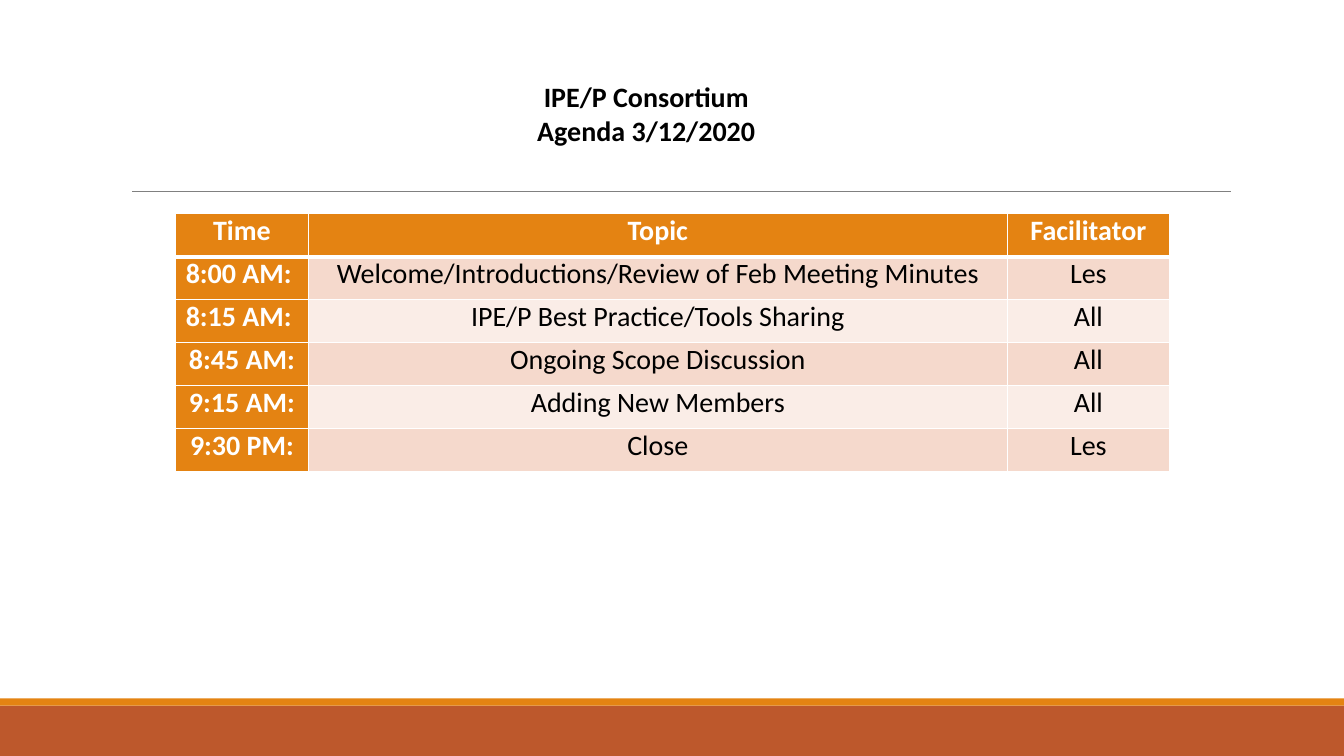
import pptx
import pptx.dml.color
import pptx.enum.shapes
import pptx.enum.text
import pptx.oxml
import pptx.oxml.ns
import pptx.util

Inches, Pt = pptx.util.Inches, pptx.util.Pt
CENTER = pptx.enum.text.PP_ALIGN.CENTER
ORANGE, RUST, WHITE, BLACK = "E48312", "BD582C", "FFFFFF", "000000"
BANDS = ["F5D9CC", "FAEDE7"]

AGENDA = [
    ("Time", "Topic", "Facilitator"),
    ("8:00 AM: ", "Welcome/Introductions/Review of Feb Meeting Minutes", "Les"),
    ("8:15 AM: ", "IPE/P Best Practice/Tools Sharing", "All"),
    ("8:45 AM:", "Ongoing Scope Discussion", "All"),
    ("9:15 AM:", "Adding New Members", "All"),
    ("9:30 PM:", "Close", "Les"),
]
COLUMN_WIDTHS = [1.32, 6.93, 1.61]
TABLE_HEIGHT = 2.56


def rgb(hex_color):
    return pptx.dml.color.RGBColor.from_string(hex_color)


def add_centered_run(paragraph, text, color, bold):
    paragraph.alignment = CENTER
    run = paragraph.add_run()
    run.text = text
    run.font.name = "Calibri"
    run.font.size = Pt(20)
    run.font.bold = bold
    run.font.color.rgb = rgb(color)


presentation = pptx.Presentation()
presentation.slide_width = Inches(13.33)
presentation.slide_height = Inches(7.5)
slide = presentation.slides.add_slide(presentation.slide_layouts[5])

# Footer bands
for top, height, color in [(7, 0.5, RUST), (6.93, 0.07, ORANGE)]:
    band = slide.shapes.add_shape(
        pptx.enum.shapes.MSO_SHAPE.RECTANGLE,
        0, Inches(top), presentation.slide_width, Inches(height))
    band.shadow.inherit = False
    band.fill.solid()
    band.fill.fore_color.rgb = rgb(color)
    band.line.fill.background()

# Rule under the title
rule = slide.shapes.add_connector(
    pptx.enum.shapes.MSO_CONNECTOR.STRAIGHT,
    Inches(1.31), Inches(1.9), Inches(12.21), Inches(1.9))
rule.line.color.rgb = rgb("808080")
rule.line.width = Pt(0.5)
rule._element.spPr.append(pptx.oxml.parse_xml(
    f"<a:effectLst {pptx.oxml.ns.nsdecls('a')}/>"))

# Title
title = slide.shapes.title
title.left, title.top = Inches(5.22), Inches(0.74)
title.width, title.height = Inches(2.38), Inches(0.77)
title_frame = title.text_frame
title_frame.word_wrap = False
title_frame.auto_size = pptx.enum.text.MSO_AUTO_SIZE.SHAPE_TO_FIT_TEXT
title_frame.vertical_anchor = pptx.enum.text.MSO_ANCHOR.MIDDLE
add_centered_run(title_frame.paragraphs[0], "IPE/P Consortium", BLACK, True)
add_centered_run(title_frame.add_paragraph(), "Agenda 3/12/2020", BLACK, True)

# Agenda table
table = slide.shapes.add_table(
    len(AGENDA), len(COLUMN_WIDTHS), Inches(1.74), Inches(2.12),
    Inches(sum(COLUMN_WIDTHS)), Inches(TABLE_HEIGHT)).table
table.first_col = True
for column, width in zip(table.columns, COLUMN_WIDTHS):
    column.width = Inches(width)

for row_index, entries in enumerate(AGENDA):
    for column_index, text in enumerate(entries):
        cell = table.cell(row_index, column_index)
        is_heading = row_index == 0 or column_index == 0
        cell.margin_left = cell.margin_right = Inches(0.07)
        cell.margin_top = cell.margin_bottom = 0

        # The edge between header and body is thicker
        thick_side = {0: "B", 1: "T"}.get(row_index)
        for side in "LRTB":
            width = Pt(3 if side == thick_side else 1)
            cell._tc.get_or_add_tcPr().append(pptx.oxml.parse_xml(
                f"<a:ln{side} {pptx.oxml.ns.nsdecls('a')} w='{width}'>"
                f"<a:solidFill><a:srgbClr val='{WHITE}'/></a:solidFill>"
                f"</a:ln{side}>"))

        cell.fill.solid()
        cell.fill.fore_color.rgb = rgb(
            ORANGE if is_heading else BANDS[(row_index - 1) % 2])
        add_centered_run(cell.text_frame.paragraphs[0], text,
                         WHITE if is_heading else BLACK, is_heading)

presentation.save("out.pptx")
